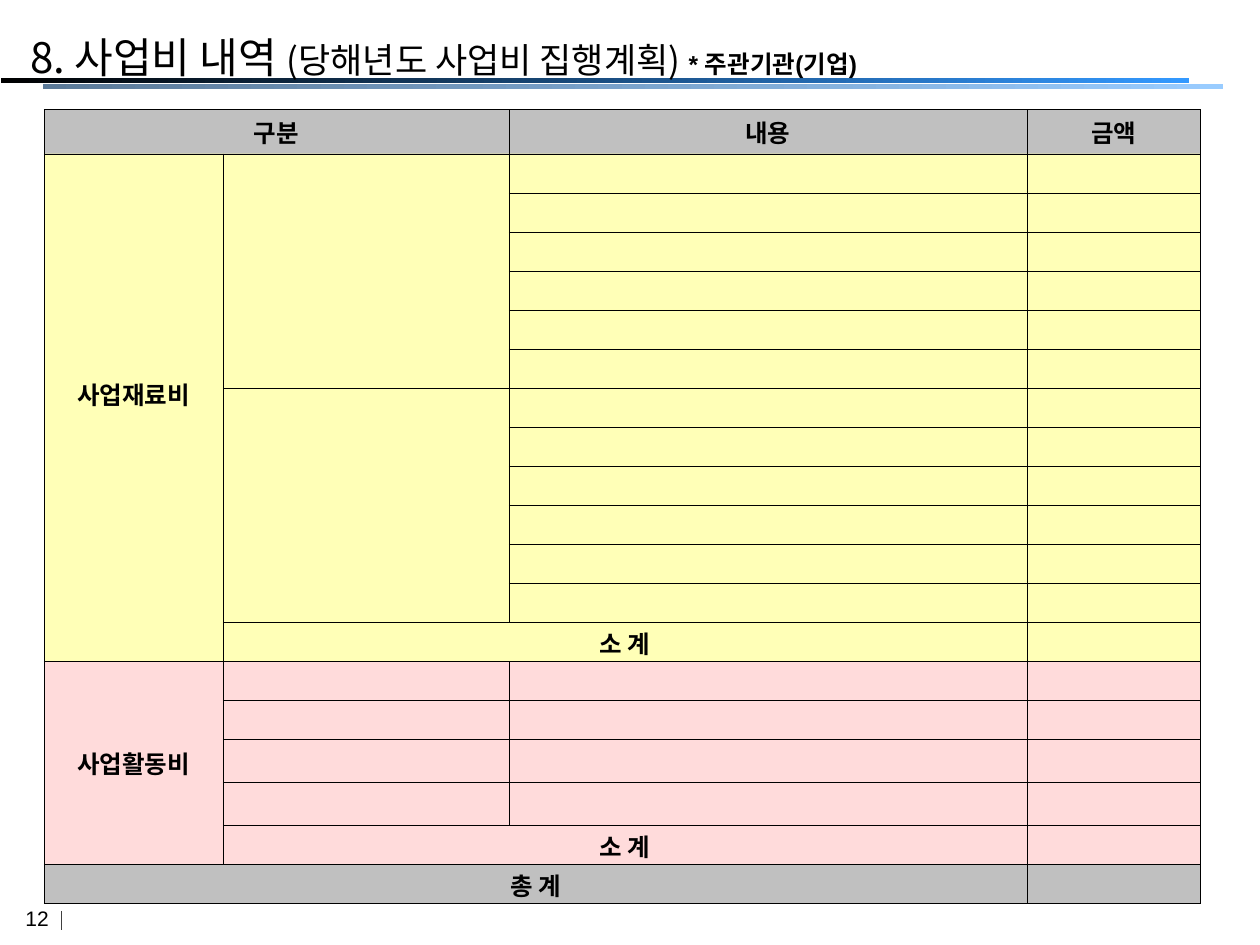
from dataclasses import dataclass

import lxml.etree
import pptx
import pptx.dml.color
import pptx.enum.shapes
import pptx.enum.text
import pptx.oxml
import pptx.oxml.ns
import pptx.util

Inches = pptx.util.Inches
Pt = pptx.util.Pt
RGBColor = pptx.dml.color.RGBColor
Align = pptx.enum.text.PP_ALIGN
qn = pptx.oxml.ns.qn

BLACK = RGBColor(0x00, 0x00, 0x00)
DARK_GRAY = RGBColor(0x40, 0x40, 0x40)
GRAY = RGBColor(0xC0, 0xC0, 0xC0)
YELLOW = RGBColor(0xFF, 0xFF, 0x99)
PINK = RGBColor(0xFF, 0xCC, 0xCC)
BLUE = RGBColor(0x33, 0x99, 0xFF)
SLATE = RGBColor(0x5B, 0x7A, 0x99)
LIGHT_BLUE = RGBColor(0x99, 0xCC, 0xFF)
KOREAN_FONT = "Noto Sans CJK KR"

COLUMN_WIDTHS = [1.42, 2.27, 4.11, 1.38]
ROW_HEIGHTS = [0.35] + [0.31] * 15 + [0.34] * 2 + [0.31] * 2
CELL_MARGIN = 0.02


@dataclass
class Bar:
    left: float
    top: float
    width: float
    start: RGBColor
    end: RGBColor


@dataclass
class Band:
    """Table rows that share one fill."""
    first: int
    last: int
    color: RGBColor
    alpha: int = 100


@dataclass
class Entry:
    row: int
    column: int
    text: str = ""
    rows: int = 1
    columns: int = 1
    bottom: float = CELL_MARGIN


BARS = [
    Bar(0.01, 0.62, 9.43, BLACK, BLUE),
    Bar(0.34, 0.67, 9.37, SLATE, LIGHT_BLUE),
]
BANDS = [Band(0, 0, GRAY), Band(1, 13, YELLOW, 70), Band(14, 18, PINK, 70), Band(19, 19, GRAY)]
ENTRIES = [
    Entry(0, 0, "구분", columns=2),
    Entry(0, 2, "내용"),
    Entry(0, 3, "금액"),
    Entry(1, 0, "사업재료비", rows=13, bottom=0.24),
    Entry(1, 1, rows=6),
    Entry(7, 1, rows=6),
    Entry(13, 1, "소 계", columns=2),
    Entry(14, 0, "사업활동비", rows=5),
    Entry(18, 1, "소 계", columns=2),
    Entry(19, 0, "총 계", columns=3),
]


def add_run(paragraph, text: str, size: float, name: str, bold: bool = False) -> None:
    run = paragraph.add_run()
    run.text = text
    for attribute, value in {"size": Pt(size), "name": name, "bold": bold}.items():
        setattr(run.font, attribute, value)
    run.font.color.rgb = BLACK
    east_asian = lxml.etree.Element(qn("a:ea"), typeface=KOREAN_FONT)
    run.font._element.find(qn("a:latin")).addnext(east_asian)


def add_bar(slide, bar: Bar) -> None:
    shape = slide.shapes.add_shape(
        pptx.enum.shapes.MSO_SHAPE.RECTANGLE,
        Inches(bar.left), Inches(bar.top), Inches(bar.width), Inches(0.04))
    shape.shadow.inherit = False
    shape.line.fill.background()
    shape.fill.gradient()
    shape.fill.gradient_angle = 0
    for stop, color, position in zip(shape.fill.gradient_stops, (bar.start, bar.end), (0, 1)):
        stop.color.rgb = color
        stop.position = position


def add_title(slide) -> None:
    frame = slide.shapes.add_textbox(
        Inches(0.14), Inches(0), Inches(8.37), Inches(0.64)).text_frame
    frame.word_wrap = True
    title = frame.paragraphs[0]
    title.line_spacing = 1.5
    add_run(title, "8. 사업비 내역 ", 24, KOREAN_FONT)
    add_run(title, "(당해년도 사업비 집행계획) ", 20, KOREAN_FONT)
    add_run(title, "* 주관기관(기업)", 14, "Arial", bold=True)


def add_page_number(slide) -> None:
    frame = slide.shapes.add_textbox(
        Inches(-0.05), Inches(7.14), Inches(0.69), Inches(0.35)).text_frame
    frame.word_wrap = False
    frame.paragraphs[0].alignment = Align.CENTER
    add_run(frame.paragraphs[0], "12", 12, "Arial")

    divider = slide.shapes.add_connector(
        pptx.enum.shapes.MSO_CONNECTOR.STRAIGHT,
        Inches(0.49), Inches(7.23), Inches(0.49), Inches(7.38))
    divider.line.color.rgb = DARK_GRAY
    divider.line.width = Pt(0.75)
    lxml.etree.SubElement(divider._element.spPr, qn("a:effectLst"))


def format_cell(cell, band: Band) -> None:
    """Set margins, borders and fill, and keep an empty cell's line low."""
    for side in ("left", "right", "top", "bottom"):
        setattr(cell, f"margin_{side}", Inches(CELL_MARGIN))
    cell.vertical_anchor = pptx.enum.text.MSO_ANCHOR.MIDDLE
    cell.text_frame.paragraphs[0]._p.get_or_add_endParaRPr().set("sz", "1000")

    properties = cell._tc.get_or_add_tcPr()
    for side in ("L", "R", "T", "B"):
        border = lxml.etree.SubElement(properties, qn(f"a:ln{side}"), w=str(Pt(0.25)))
        solid = lxml.etree.SubElement(border, qn("a:solidFill"))
        lxml.etree.SubElement(solid, qn("a:srgbClr"), val=str(BLACK))

    cell.fill.solid()
    cell.fill.fore_color.rgb = band.color
    if band.alpha < 100:
        color = properties.find(qn("a:solidFill")).find(qn("a:srgbClr"))
        lxml.etree.SubElement(color, qn("a:alpha"), val=str(band.alpha * 1000))


def add_budget_table(slide) -> None:
    table = slide.shapes.add_table(
        len(ROW_HEIGHTS), len(COLUMN_WIDTHS), Inches(0.35), Inches(0.87),
        Inches(sum(COLUMN_WIDTHS)), Inches(sum(ROW_HEIGHTS))).table
    table.first_row = table.horz_banding = False
    for column, width in zip(table.columns, COLUMN_WIDTHS):
        column.width = Inches(width)
    for row, height in zip(table.rows, ROW_HEIGHTS):
        row.height = Inches(height)

    for band in BANDS:
        for row in range(band.first, band.last + 1):
            for column in range(len(COLUMN_WIDTHS)):
                format_cell(table.cell(row, column), band)

    for entry in ENTRIES:
        cell = table.cell(entry.row, entry.column)
        if entry.rows * entry.columns > 1:
            cell.merge(table.cell(entry.row + entry.rows - 1, entry.column + entry.columns - 1))
        cell.margin_bottom = Inches(entry.bottom)
        if entry.text:
            label = cell.text_frame.paragraphs[0]
            label.alignment = Align.CENTER
            add_run(label, entry.text, 14, "DejaVu Sans", bold=True)


def main() -> None:
    deck = pptx.Presentation()
    deck.slide_width, deck.slide_height = Inches(10), Inches(7.5)
    slide = deck.slides.add_slide(deck.slide_layouts[6])
    add_page_number(slide)
    for bar in BARS:
        add_bar(slide, bar)
    add_title(slide)
    add_budget_table(slide)
    deck.save("out.pptx")


if __name__ == "__main__":
    main()
